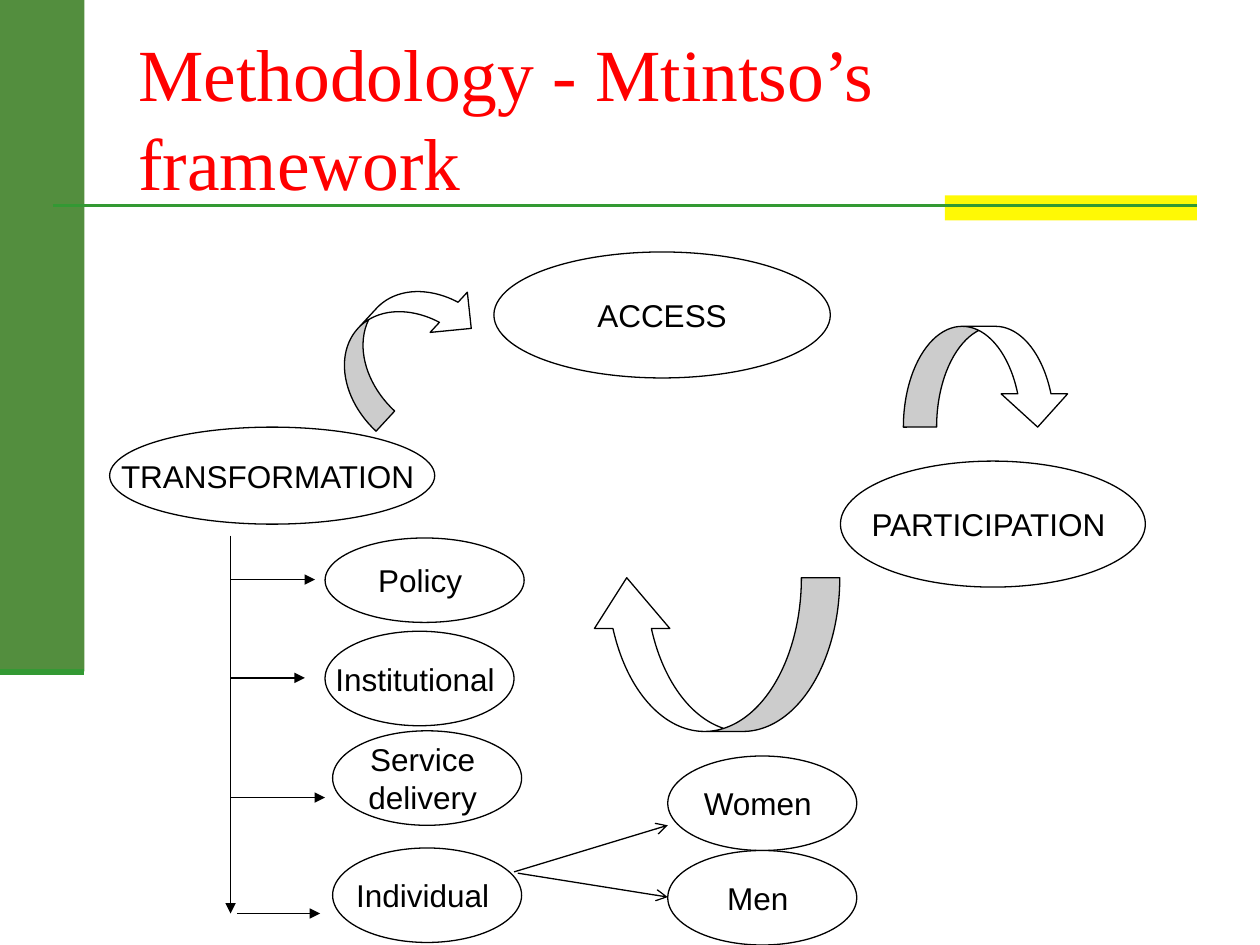
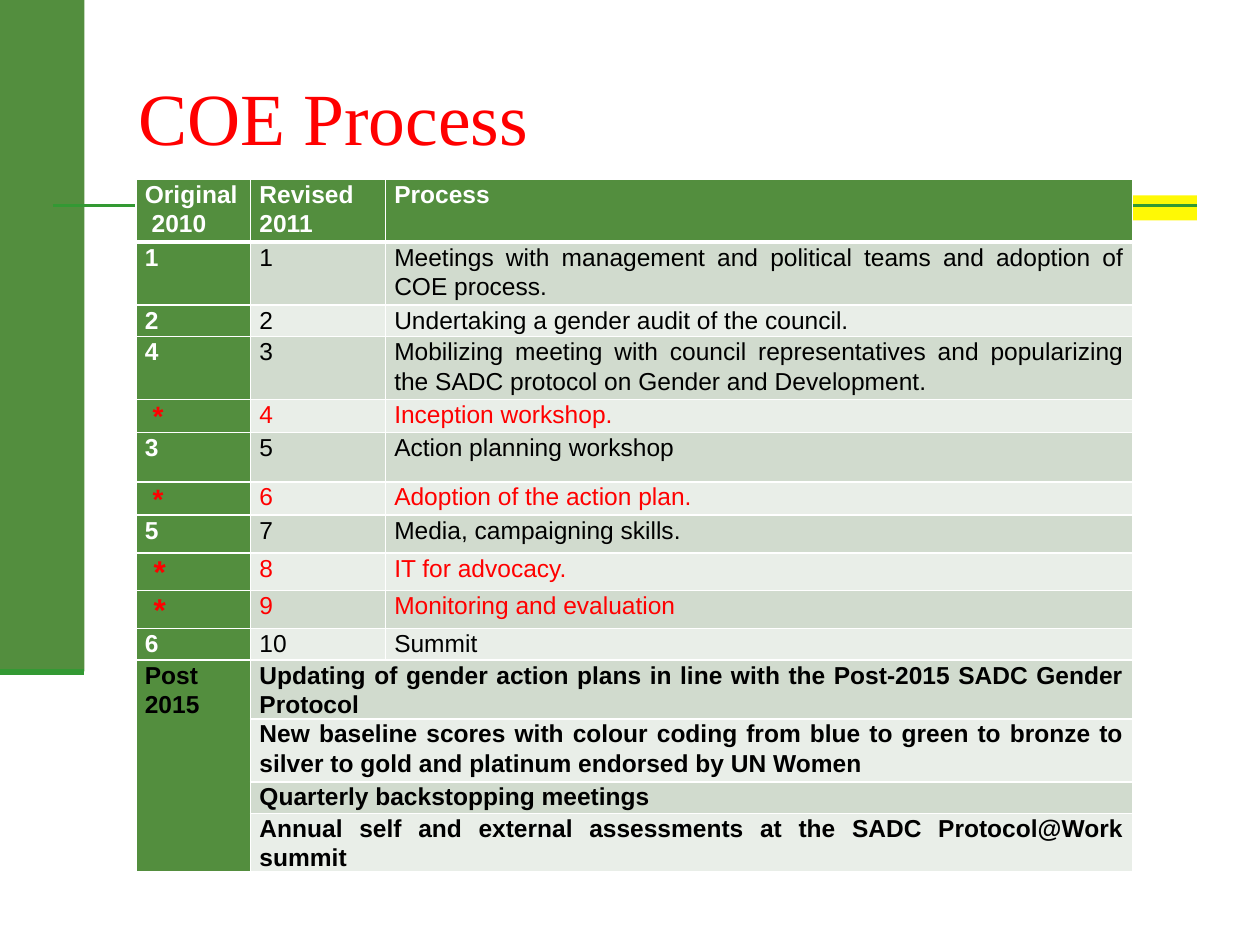
import pptx
import pptx.util
import pptx.dml.color
import pptx.enum.shapes
import pptx.enum.text
import pptx.oxml
import pptx.oxml.ns
import lxml.etree

Inches = pptx.util.Inches
Pt = pptx.util.Pt
SHAPE = pptx.enum.shapes.MSO_SHAPE
ALIGN = pptx.enum.text.PP_ALIGN
ANCHOR = pptx.enum.text.MSO_ANCHOR
qn = pptx.oxml.ns.qn

COLORS = {
    "band": "538E3E", "rule": "339933", "yellow": "FFF905", "red": "FF0000",
    "black": "000000", "white": "FFFFFF", "dark_row": "D1DBCE", "light_row": "E9EEE8",
}


def rgb(name):
    return pptx.dml.color.RGBColor.from_string(COLORS[name])


class Deck:
    """Holds the presentation, the shared style and the current slide."""

    title_font, body_font = "Times New Roman", "Arial"

    def __init__(self):
        self.prs = pptx.Presentation()
        self.prs.slide_width, self.prs.slide_height = Inches(10), Inches(7.5)

    def new_slide(self):
        self.slide = self.prs.slides.add_slide(self.prs.slide_layouts[6])
        self.shape(SHAPE.RECTANGLE, 0, 0, 0.67, 5.33, "band", outline=None)
        self.shape(SHAPE.RECTANGLE, 7.5, 1.55, 2, 0.2, "yellow", outline=None)
        self.line(0.42, 1.63, 9.5, 1.63, "rule", 1.5)
        self.line(0, 5.33, 0.67, 5.33, "rule", 3.5)

    def run(self, paragraph, text, size, color, bold=False, font=body_font):
        run = paragraph.add_run()
        run.text = text
        run.font.name, run.font.size, run.font.bold = font, Pt(size), bold
        run.font.color.rgb = rgb(color)

    def title(self, text):
        box = self.slide.shapes.add_textbox(Inches(1), Inches(0.3), Inches(8.5), Inches(1.25))
        frame = box.text_frame
        frame.word_wrap = True
        frame.vertical_anchor = ANCHOR.MIDDLE
        self.run(frame.paragraphs[0], text, 42, "red", font=self.title_font)

    def shape(self, kind, left, top, width, height, fill="white", outline="black"):
        shape = self.slide.shapes.add_shape(
            kind, Inches(left), Inches(top), Inches(width), Inches(height))
        shape.shadow.inherit = False
        shape.fill.solid()
        shape.fill.fore_color.rgb = rgb(fill)
        if outline:
            shape.line.color.rgb = rgb(outline)
            shape.line.width = Pt(0.75)
        else:
            shape.line.fill.background()
        return shape

    def ellipse(self, lines, *place):
        frame = self.shape(SHAPE.OVAL, *place).text_frame
        frame.word_wrap = False
        frame.vertical_anchor = ANCHOR.MIDDLE
        for i, text in enumerate(lines):
            paragraph = frame.add_paragraph() if i else frame.paragraphs[0]
            paragraph.alignment = ALIGN.CENTER
            self.run(paragraph, text, 18, "black")

    def curved_arrow(self, kind, place, adjustments, rotation=0):
        arrow = self.shape(kind, *place)
        for i, value in enumerate(adjustments):
            arrow.adjustments[i] = value
        arrow.rotation = rotation

    def line(self, x1, y1, x2, y2, color="black", width=0.75, head=None):
        line = self.slide.shapes.add_connector(
            pptx.enum.shapes.MSO_CONNECTOR.STRAIGHT,
            Inches(x1), Inches(y1), Inches(x2), Inches(y2))
        line.line.color.rgb = rgb(color)
        line.line.width = Pt(width)
        if head:
            lxml.etree.SubElement(line.line._get_or_add_ln(), qn("a:tailEnd"), type=head)
        lxml.etree.SubElement(line._element.spPr, qn("a:effectLst"))

    def table(self, left, top, widths, heights):
        frame = self.slide.shapes.add_table(
            len(heights), len(widths), Inches(left), Inches(top),
            Inches(sum(widths)), Inches(sum(heights)))
        for column, width in zip(frame.table.columns, widths):
            column.width = Inches(width)
        for row, height in zip(frame.table.rows, heights):
            row.height = Inches(height)
        return frame.table

    def cell_style(self, cell, fill, top=1, bottom=1):
        cell.margin_left = cell.margin_right = Inches(0.07)
        cell.margin_top = cell.margin_bottom = 0
        props = cell._tc.get_or_add_tcPr()
        for side, width in (("L", 1), ("R", 1), ("T", top), ("B", bottom)):
            border = lxml.etree.SubElement(props, qn("a:ln" + side), w=str(Pt(width)))
            solid = lxml.etree.SubElement(border, qn("a:solidFill"))
            lxml.etree.SubElement(solid, qn("a:srgbClr"), val=COLORS["white"])
        cell.fill.solid()
        cell.fill.fore_color.rgb = rgb(fill)

    def cell_text(self, cell, text, color="black", bold=False, size=14):
        paragraph = cell.text_frame.paragraphs[0]
        paragraph.alignment = ALIGN.JUSTIFY
        paragraph.line_spacing = 1.07
        self.run(paragraph, text, size, color, bold)


def framework_slide(deck):
    deck.new_slide()
    deck.title("Methodology - Mtintso’s framework")

    deck.ellipse(["ACCESS"], 3.92, 2, 2.67, 1)
    deck.ellipse(["PARTICIPATION "], 6.67, 3.66, 2.42, 1)
    deck.ellipse(["TRANSFORMATION "], 0.87, 3.39, 2.58, 0.77)

    down_bend, left_bend = (0.33, 0.66, 0.33), (0.25, 0.49, 0.33)
    deck.curved_arrow(SHAPE.CURVED_DOWN_ARROW, (7.17, 2.59, 1.33, 0.8), down_bend)
    deck.curved_arrow(SHAPE.CURVED_LEFT_ARROW, (5.06, 4.2, 1.22, 1.99), left_bend, 90)
    deck.curved_arrow(SHAPE.CURVED_DOWN_ARROW, (2.53, 2.38, 1.33, 0.66), down_bend, 312.8)

    trunk = 1.83
    deck.line(trunk, 4.25, trunk, 7.25, head="triangle")
    for start, end, y in ((trunk, 2.5, 4.6), (trunk, 2.42, 5.38),
                          (trunk, 2.58, 6.33), (1.88, 2.54, 7.25)):
        deck.line(start, y, end, y, head="triangle")

    deck.ellipse(["Policy "], 2.58, 4.27, 1.58, 0.67)
    for lines, left, top in ((["Institutional "], 2.58, 5.01),
                             (["Service ", "delivery "], 2.64, 5.8),
                             (["Individual "], 2.64, 6.73),
                             (["Women "], 5.3, 6),
                             (["Men "], 5.3, 6.75)):
        deck.ellipse(lines, left, top, 1.5, 0.75)
    deck.line(4.08, 6.92, 5.3, 6.55, head="arrow")
    deck.line(4.11, 6.93, 5.3, 7.12, head="arrow")


HEADINGS = ("Original  2010 ", "Revised 2011", "Process ")
# Step in 2010 ("*" marks a new step), step in 2011, process, row height
STEPS = [
    ("1", "1", "Meetings with management and political teams and adoption of COE process.", 0.5),
    ("2", "2", "Undertaking a gender audit of the council.", 0.25),
    ("4", "3", "Mobilizing meeting with council representatives and popularizing "
               "the SADC protocol on Gender and Development.", 0.5),
    (" *", "4", "Inception workshop. ", 0.25),
    ("3", "5", "Action planning workshop", 0.39),
    (" *", "6", "Adoption of the action plan.", 0.25),
    ("5", "7", "Media, campaigning skills.", 0.3),
    (" *", "8", "IT for advocacy.", 0.25),
    (" *", "9", "Monitoring and evaluation", 0.25),
    ("6", "10", "Summit", 0.25),
]
POST_2015 = [
    ("Updating of gender action plans in line with the Post-2015 SADC Gender Protocol ", 0.25),
    ("New baseline scores with colour coding from blue to green to bronze to silver "
     "to gold and platinum endorsed by UN Women ", 0.5),
    ("Quarterly backstopping meetings ", 0.25),
    ("Annual self and external assessments at the SADC Protocol@Work summit", 0.25),
]
LARGE_STARS = ("8", "9")


def process_slide(deck):
    deck.new_slide()
    heights = [0.5] + [step[-1] for step in STEPS] + [height for _, height in POST_2015]
    table = deck.table(1.08, 1.42, (0.91, 1.07, 5.93), heights)

    for r in range(len(heights)):
        stripe = "dark_row" if r % 2 else "light_row"
        for c in range(3):
            fill = "band" if r == 0 or c == 0 else stripe
            deck.cell_style(table.cell(r, c), fill,
                            top=3 if r == 1 else 1, bottom=3 if r == 0 else 1)

    for c, heading in enumerate(HEADINGS):
        deck.cell_text(table.cell(0, c), heading, "white", True)

    for r, (original, revised, process, _) in enumerate(STEPS, 1):
        is_new = "*" in original
        star_size = 18 if revised in LARGE_STARS else 16
        deck.cell_text(table.cell(r, 0), original, "red" if is_new else "white", True,
                       star_size if is_new else 14)
        for c, text in ((1, revised), (2, process)):
            deck.cell_text(table.cell(r, c), text, "red" if is_new else "black")

    first_post = len(STEPS) + 1
    table.cell(first_post, 0).merge(table.cell(len(heights) - 1, 0))
    deck.cell_text(table.cell(first_post, 0), "Post 2015 ", bold=True)
    for r, (activity, _) in enumerate(POST_2015, first_post):
        table.cell(r, 1).merge(table.cell(r, 2))
        deck.cell_text(table.cell(r, 1), activity, bold=True)

    deck.title("COE Process")


def main():
    deck = Deck()
    framework_slide(deck)
    process_slide(deck)
    deck.prs.save("out.pptx")


if __name__ == "__main__":
    main()
